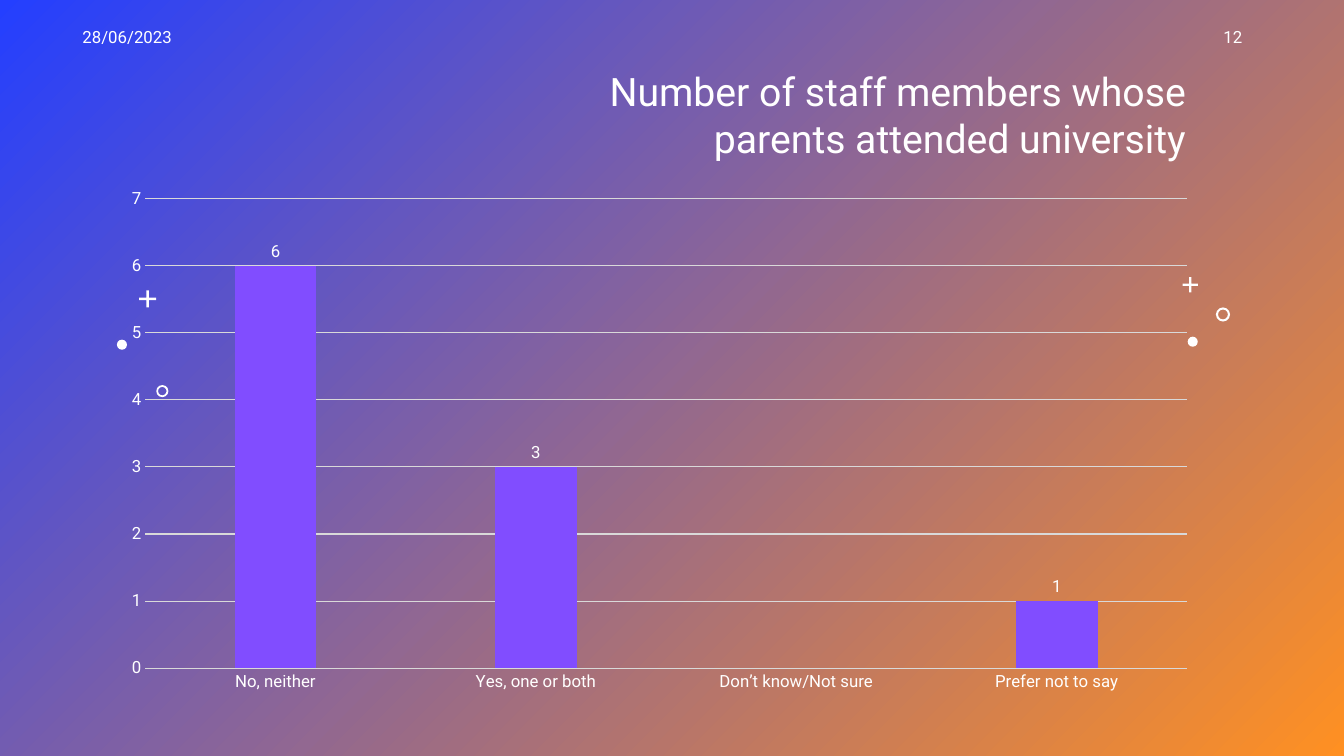
from pptx import Presentation
from pptx.chart.data import CategoryChartData
from pptx.dml.color import RGBColor
from pptx.enum.chart import XL_CHART_TYPE, XL_LABEL_POSITION, XL_TICK_MARK
from pptx.enum.shapes import MSO_SHAPE
from pptx.enum.text import MSO_ANCHOR, PP_ALIGN
from pptx.util import Inches, Pt

WHITE = RGBColor(0xFF, 0xFF, 0xFF)
BLUE = RGBColor(0x24, 0x3F, 0xFF)
ORANGE = RGBColor(0xFF, 0x90, 0x22)
PURPLE = RGBColor(0x81, 0x4D, 0xFF)
GREY = RGBColor(0xD9, 0xD9, 0xD9)
FONT = "Roboto"
VALUES = {
    "No, neither": 6,
    "Yes, one or both": 3,
    "Don’t know/Not sure": None,
    "Prefer not to say": 1,
}
MARKS = [
    (MSO_SHAPE.OVAL, 11.78, 3.34, 0.1),
    (MSO_SHAPE.CROSS, 11.73, 2.75, 0.15),
    (MSO_SHAPE.DONUT, 12.06, 3.05, 0.14),
    (MSO_SHAPE.CROSS, 1.38, 2.88, 0.17),
    (MSO_SHAPE.OVAL, 1.16, 3.37, 0.1),
    (MSO_SHAPE.DONUT, 1.55, 3.82, 0.12),
]
ADJUST = {MSO_SHAPE.CROSS: 0.43, MSO_SHAPE.DONUT: 0.15}


def style(font, size):
    """Give a font the slide's typeface and white colour."""
    font.name = FONT
    font.size = Pt(size)
    font.color.rgb = WHITE


def place(shape, box):
    """Move a shape to a box given in inches."""
    shape.left, shape.top, shape.width, shape.height = map(Inches, box)


def write(shape, text, size, align):
    """Fill a shape with one paragraph of top-anchored text."""
    frame = shape.text_frame
    frame.word_wrap = True
    frame.vertical_anchor = MSO_ANCHOR.TOP
    frame.text = text
    para = frame.paragraphs[0]
    para.alignment = align
    style(para.runs[0].font, size)


def paint(slide):
    """Fill the background with a diagonal gradient."""
    fill = slide.background.fill
    fill.gradient()
    fill.gradient_angle = 315
    for stop, color, place_at in zip(fill.gradient_stops, (BLUE, ORANGE), (0, 1)):
        stop.color.rgb = color
        stop.position = place_at


def add_mark(slide, kind, left, top, size):
    """Draw one small white ornament."""
    mark = slide.shapes.add_shape(kind, *map(Inches, (left, top, size, size)))
    mark.shadow.inherit = False
    mark.fill.solid()
    mark.fill.fore_color.rgb = WHITE
    mark.line.fill.background()
    if kind in ADJUST:
        mark.adjustments[0] = ADJUST[kind]


def add_bars(slide, box):
    """Draw the column chart in its box."""
    data = CategoryChartData()
    data.categories = list(VALUES)
    data.add_series("Series 1", list(VALUES.values()))
    kind = XL_CHART_TYPE.COLUMN_CLUSTERED
    chart = slide.shapes.add_chart(kind, *map(Inches, box), data).chart
    chart.has_legend = False
    chart.has_title = False
    style(chart.font, 12)
    for axis in (chart.category_axis, chart.value_axis):
        axis.major_tick_mark = axis.minor_tick_mark = XL_TICK_MARK.NONE
        style(axis.tick_labels.font, 12)
    value = chart.value_axis
    value.minimum_scale, value.maximum_scale, value.major_unit = 0, 7, 1
    value.format.line.fill.background()
    for line in (chart.category_axis.format.line, value.major_gridlines.format.line):
        line.color.rgb = GREY
        line.width = Pt(0.75)
    plot = chart.plots[0]
    plot.gap_width, plot.overlap = 219, -27
    plot.vary_by_categories = False
    bars = plot.series[0].format.fill
    bars.solid()
    bars.fore_color.rgb = PURPLE
    plot.has_data_labels = True
    labels = plot.data_labels
    labels.show_value = True
    labels.position = XL_LABEL_POSITION.OUTSIDE_END
    style(labels.font, 12)


def add_head(slide, box):
    """Place the date and the slide number at the ends of the header."""
    left, top, width, height = box
    part = 3
    items = (
        ("28/06/2023", left, PP_ALIGN.LEFT),
        ("12", left + width - part, PP_ALIGN.RIGHT),
    )
    for text, start, align in items:
        label = slide.shapes.add_textbox(*map(Inches, (start, top, part, height)))
        write(label, text, 12, align)


def main():
    """Build and save the slide."""
    deck = Presentation()
    deck.slide_width, deck.slide_height = Inches(13.33), Inches(7.5)
    slide = deck.slides.add_slide(deck.slide_layouts[5])
    paint(slide)
    for mark in MARKS:
        add_mark(slide, *mark)
    add_bars(slide, (1.09, 1.77, 10.9, 5.2))
    add_head(slide, (0.72, 0.22, 11.7, 0.4))
    title = slide.shapes.title
    place(title, (5.49, 0.62, 6.37, 1.04))
    text = "Number of staff members whose parents attended university"
    write(title, text, 28, PP_ALIGN.RIGHT)
    deck.save("out.pptx")


if __name__ == "__main__":
    main()
